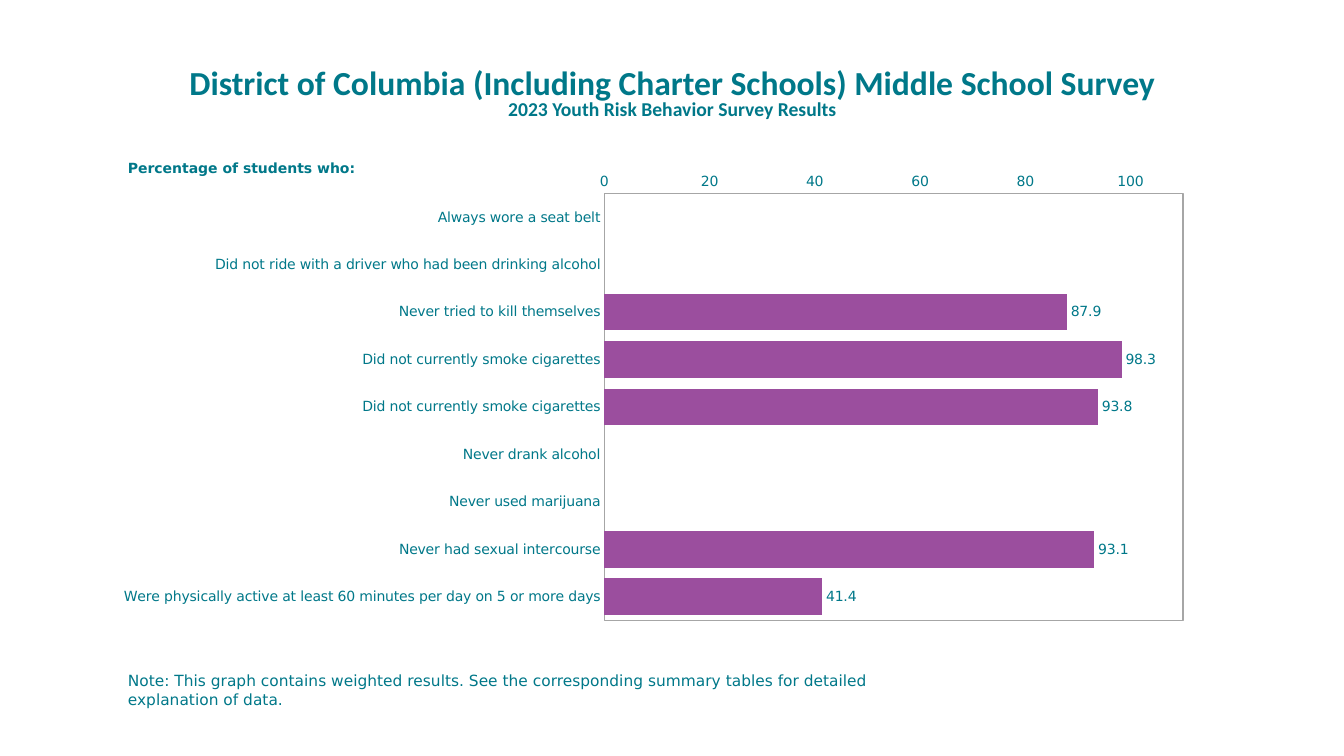
from lxml import etree
from pptx import Presentation
from pptx.chart.data import CategoryChartData
from pptx.dml.color import RGBColor
from pptx.enum.chart import (XL_AXIS_CROSSES as CROSSES, XL_CHART_TYPE as CHART,
                             XL_LABEL_POSITION as LABEL, XL_TICK_MARK as TICK)
from pptx.enum.text import MSO_ANCHOR, MSO_AUTO_SIZE, PP_ALIGN
from pptx.oxml import parse_xml
from pptx.oxml.ns import nsdecls, qn
from pptx.util import Inches, Pt

TEAL, PURPLE, GREY = "007889", "9B4E9E", "A6A6A6"
HEAD, BODY = "Calibri", "DejaVu Sans"

RESULTS = [
    ("Always wore a seat belt", None),
    ("Did not ride with a driver who had been drinking alcohol", None),
    ("Never tried to kill themselves", 87.9),
    ("Did not currently smoke cigarettes", 98.3),
    ("Did not currently smoke cigarettes", 93.8),
    ("Never drank alcohol", None),
    ("Never used marijuana", None),
    ("Never had sexual intercourse", 93.1),
    ("Were physically active at least 60 minutes per day on 5 or more days", 41.4),
]


def rgb(value):
    return RGBColor.from_string(value)


def apply(target, **values):
    for name, value in values.items():
        setattr(target, name, value)


class SurveySlide:
    def __init__(self, prs):
        self.s = prs.slides.add_slide(prs.slide_layouts[5])

    def style(self, font, name, size, bold=False):
        apply(font, name=name, size=Pt(size), bold=bold)
        font.color.rgb = rgb(TEAL)

    def fill_text(self, sp, box, text, name, size, bold, align):
        left, top, width, height = (Inches(v) for v in box)
        apply(sp, left=left, top=top, width=width, height=height)
        tf = sp.text_frame
        apply(tf, word_wrap=True, auto_size=MSO_AUTO_SIZE.NONE,
              vertical_anchor=MSO_ANCHOR.TOP)
        p = tf.paragraphs[0]
        apply(p, alignment=align, space_before=Pt(0))
        r = p.add_run()
        r.text = text
        self.style(r.font, name, size, bold)

    def title(self, box, text, size):
        self.fill_text(self.s.shapes.title, box, text, HEAD, size, True, PP_ALIGN.CENTER)

    def text(self, box, text, size, name=BODY, bold=False, align=PP_ALIGN.LEFT):
        sp = self.s.shapes.add_textbox(0, 0, 0, 0)
        self.fill_text(sp, box, text, name, size, bold, align)

    def bar_chart(self, box, results, plot):
        data = CategoryChartData(number_format="General")
        data.categories = [label for label, _ in results]
        data.add_series("Series 1", [value for _, value in results])
        chart = self.s.shapes.add_chart(
            CHART.BAR_CLUSTERED, *(Inches(v) for v in box), data).chart
        apply(chart, has_legend=False, has_title=False)
        self.style(chart.font, BODY, 10)

        # Bars and value labels
        bars = chart.plots[0]
        apply(bars, gap_width=30, overlap=-82, vary_by_categories=False,
              has_data_labels=True)
        apply(bars.data_labels, show_value=True, number_format="#,##0.0",
              number_format_is_linked=False, position=LABEL.OUTSIDE_END)
        fill = bars.series[0].format.fill
        fill.solid()
        fill.fore_color.rgb = rgb(PURPLE)

        # Axes: first category on top, scale along the bottom
        for axis in (chart.category_axis, chart.value_axis):
            apply(axis, major_tick_mark=TICK.NONE, minor_tick_mark=TICK.NONE,
                  has_major_gridlines=False)
            axis.format.line.color.rgb = rgb(GREY)
            axis.format.line.width = Pt(1)
        apply(chart.category_axis, reverse_order=True, crosses=CROSSES.MAXIMUM)
        apply(chart.value_axis, minimum_scale=0, maximum_scale=110, major_unit=20)
        apply(chart.value_axis.tick_labels, number_format="General",
              number_format_is_linked=False)
        self.frame_plot(chart, plot)

    def frame_plot(self, chart, plot):
        """Fix the inner plot area and draw its border."""
        area = chart.plots[0]._element.getparent() if hasattr(
            chart.plots[0], "_element") else chart._chartSpace.chart.plotArea
        for old in area.findall(qn("c:layout")):
            area.remove(old)
        layout = parse_xml(f"<c:layout {nsdecls('c')}><c:manualLayout/></c:layout>")
        settings = [("layoutTarget", "inner"), ("xMode", "edge"), ("yMode", "edge"),
                    *zip("xywh", plot)]
        for tag, value in settings:
            etree.SubElement(layout[0], qn(f"c:{tag}")).set("val", str(value))
        area.insert(0, layout)
        area.append(parse_xml(
            f'<c:spPr {nsdecls("c", "a")}><a:noFill/><a:ln w="12700"><a:solidFill>'
            f'<a:srgbClr val="{GREY}"/></a:solidFill></a:ln></c:spPr>'))


def main():
    prs = Presentation()
    apply(prs, slide_width=Inches(13.33), slide_height=Inches(7.5))
    slide = SurveySlide(prs)

    # Chart
    slide.bar_chart((1, 1.25, 11, 5.55), RESULTS, (0.454, 0.121, 0.522, 0.763))

    # Headings
    slide.title((1.67, 0.56, 10, 0.5),
                "District of Columbia (Including Charter Schools) Middle School Survey", 24)
    slide.text((1.67, 0.91, 10, 0.34), "2023 Youth Risk Behavior Survey Results",
               14, HEAD, True, PP_ALIGN.CENTER)

    # Chart caption and note
    slide.text((1.17, 1.53, 3.47, 0.27), "Percentage of students who:", 10, bold=True)
    slide.text((1.17, 6.61, 8.33, 0.29),
               "Note: This graph contains weighted results. See the corresponding "
               "summary tables for detailed explanation of data.", 11)

    prs.save("out.pptx")


if __name__ == "__main__":
    main()
